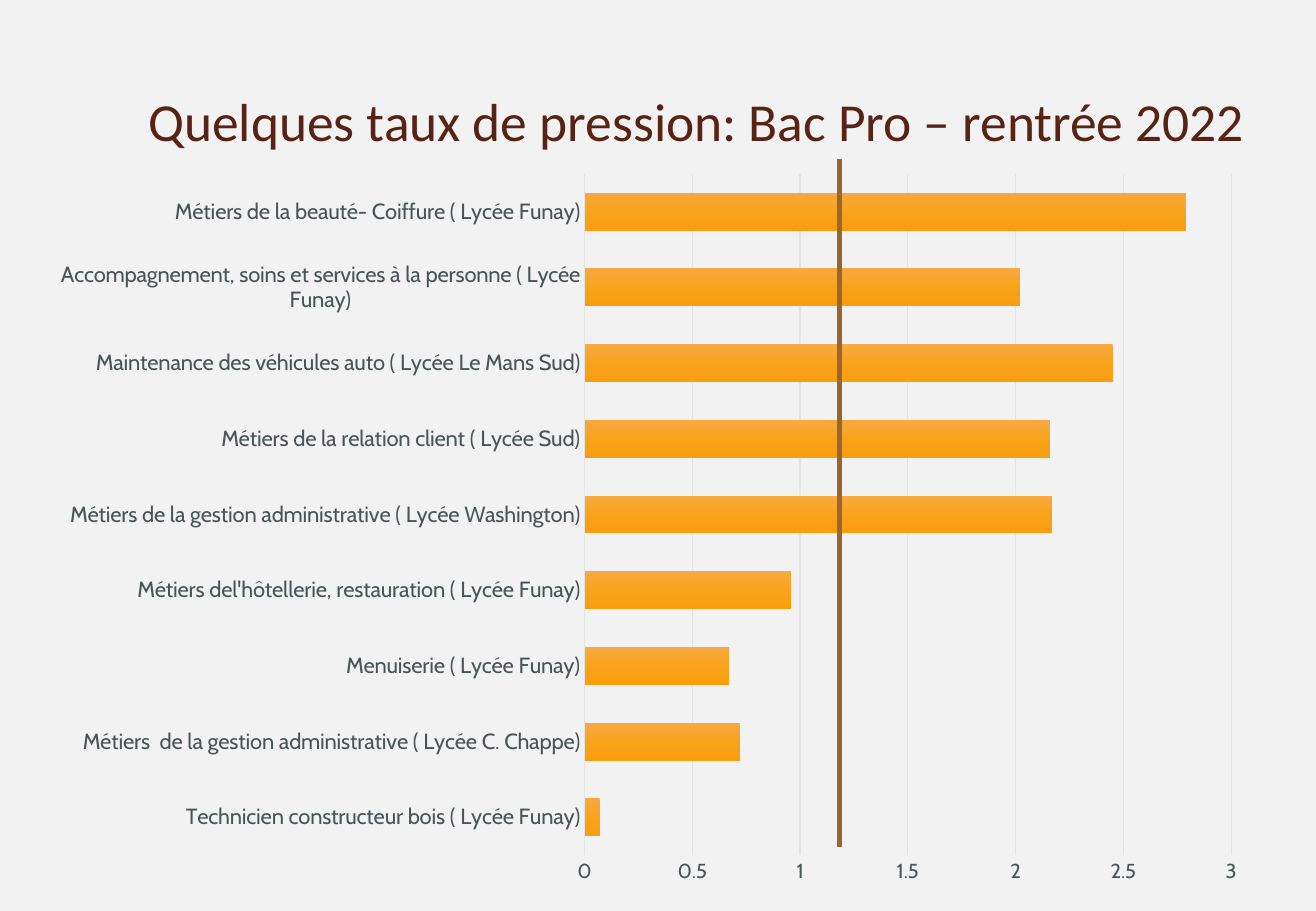
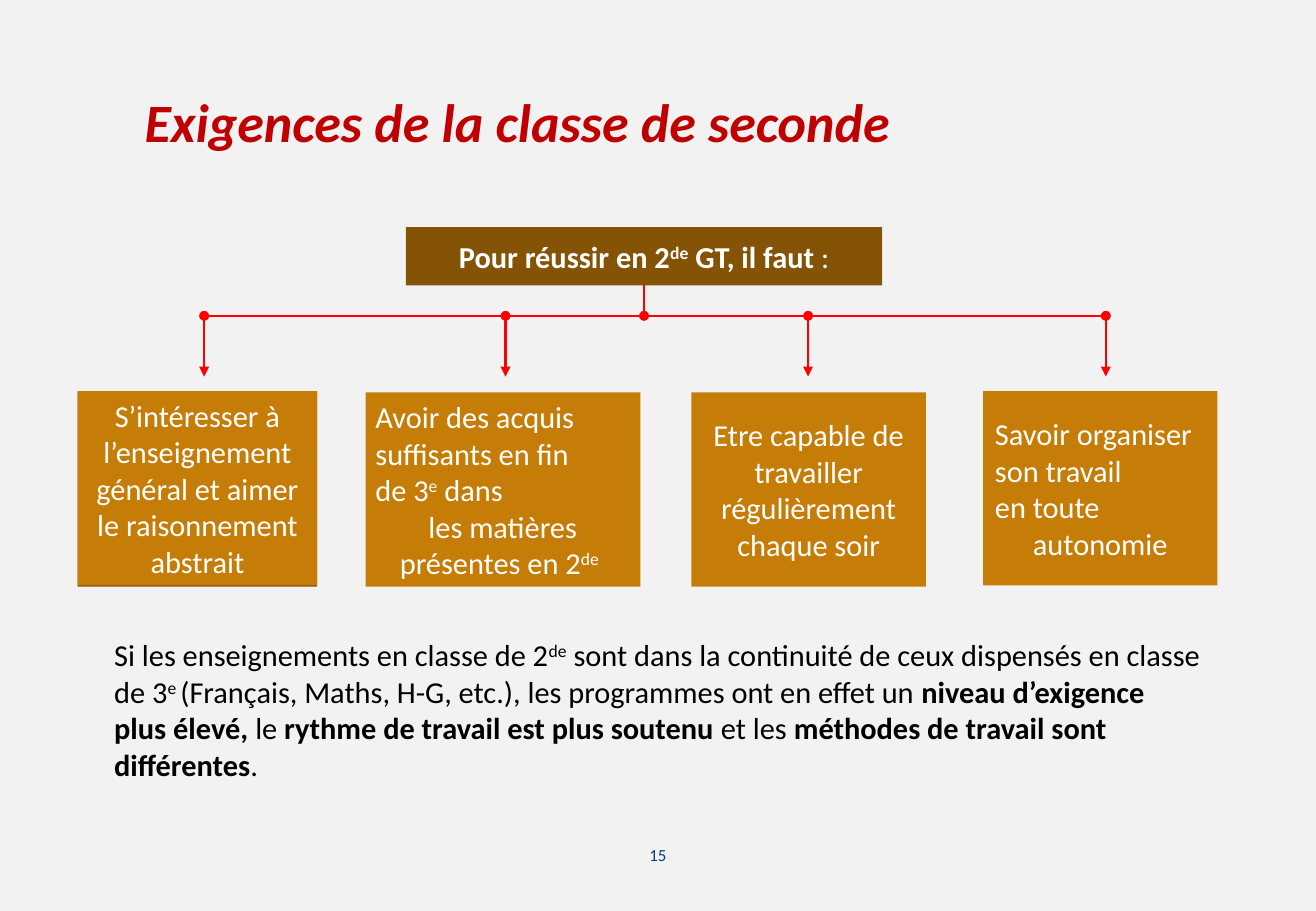
import copy

import lxml.etree
import pptx
import pptx.chart.data
import pptx.dml.color
import pptx.enum.chart
import pptx.enum.shapes
import pptx.enum.text
import pptx.oxml
import pptx.oxml.ns
import pptx.util

PX = 9144  # 100 px to the inch
WIDTH, HEIGHT = 1083, 750

BACKGROUND, WHITE, BLACK = "F2F2F2", "FFFFFF", "000000"
BROWN, DARK_RED, RED, LINE_BROWN = "572314", "C00000", "FF0000", "996633"
ROOT_FILL, CARD_FILL = "845305", "C67D08"
NUMBER_BLUE, AXIS_TEXT, GRID = "073E87", "4A5356", "E3E6E7"
BAR_STOPS = [(0, "F7A942"), (0.5, "F9A31A"), (1, "F99E0F")]
TEXT_FONT, CHART_FONT = "Calibri", "Cabin"

LEFT = pptx.enum.text.PP_ALIGN.LEFT
CENTER = pptx.enum.text.PP_ALIGN.CENTER
TOP = pptx.enum.text.MSO_ANCHOR.TOP
MIDDLE = pptx.enum.text.MSO_ANCHOR.MIDDLE
TITLE_ONLY, TITLE_AND_BODY = 5, 1


def px(length):
    return pptx.util.Emu(length * PX)


def color(value):
    return pptx.dml.color.RGBColor.from_string(value)


class Deck:
    """Holds the style and the current slide."""

    def __init__(self):
        self.presentation = pptx.Presentation()
        self.presentation.slide_width = px(WIDTH)
        self.presentation.slide_height = px(HEIGHT)
        background = self.presentation.slide_master.background.fill
        background.solid()
        background.fore_color.rgb = color(BACKGROUND)
        self.slide = None

    def new_slide(self, layout):
        layouts = self.presentation.slide_layouts
        self.slide = self.presentation.slides.add_slide(layouts[layout])

    def set_text(self, shape, paragraphs, size, text_color, anchor=MIDDLE,
                 insets=(10, 10), wrap=True):
        """Each paragraph is (alignment, runs); a run is (text, marks):
        b bold, i italic, ^ superscript."""
        frame = shape.text_frame
        frame.auto_size = pptx.enum.text.MSO_AUTO_SIZE.NONE
        frame.word_wrap = wrap
        frame.vertical_anchor = anchor
        frame.margin_left, frame.margin_right = map(px, insets)
        frame.margin_top = frame.margin_bottom = px(5)
        for index, (alignment, runs) in enumerate(paragraphs):
            paragraph = frame.add_paragraph() if index else frame.paragraphs[0]
            paragraph.alignment = alignment
            paragraph.space_before = pptx.util.Pt(0)
            for text, marks in runs:
                run = paragraph.add_run()
                run.text = text
                run.font.name = TEXT_FONT
                run.font.size = pptx.util.Pt(size)
                run.font.color.rgb = color(text_color)
                run.font.bold = "b" in marks
                run.font.italic = "i" in marks
                if "^" in marks:
                    run._r.get_or_add_rPr().set("baseline", "30000")

    def place(self, shape, box):
        shape.left, shape.top, shape.width, shape.height = map(px, box)

    def title(self, box, text, size, text_color, marks="", **style):
        shape = self.slide.shapes.title
        self.place(shape, box)
        self.set_text(shape, [(LEFT, [(text, marks)])], size, text_color,
                      **style)

    def body(self, box, paragraphs, size, text_color):
        shape = self.slide.placeholders[1]
        self.place(shape, box)
        self.set_text(shape, paragraphs, size, text_color, anchor=TOP)
        for paragraph in shape.text_frame.paragraphs:
            properties = paragraph._p.get_or_add_pPr()
            properties.set("marL", "0")
            properties.set("indent", "0")
            lxml.etree.SubElement(properties, pptx.oxml.ns.qn("a:buNone"))

    def text(self, box, paragraphs, size, text_color):
        shape = self.slide.shapes.add_textbox(*map(px, box))
        self.set_text(shape, paragraphs, size, text_color)

    def rectangle(self, box, fill, paragraphs=(), **style):
        kind = pptx.enum.shapes.MSO_SHAPE.RECTANGLE
        shape = self.slide.shapes.add_shape(kind, *map(px, box))
        shape.shadow.inherit = False
        shape.fill.solid()
        shape.fill.fore_color.rgb = color(fill)
        shape.line.fill.background()
        self.set_text(shape, paragraphs, 18, WHITE, **style)
        return shape

    def line(self, start, end, line_color, width, head=None, tail=None):
        kind = pptx.enum.shapes.MSO_CONNECTOR.STRAIGHT
        connector = self.slide.shapes.add_connector(kind, *map(px, start + end))
        connector.line.color.rgb = color(line_color)
        connector.line.width = pptx.util.Pt(width)
        outline = connector.line._get_or_add_ln()
        for tag, arrow in (("a:headEnd", head), ("a:tailEnd", tail)):
            if arrow:
                lxml.etree.SubElement(outline, pptx.oxml.ns.qn(tag), type=arrow)
        lxml.etree.SubElement(connector._element.spPr,
                              pptx.oxml.ns.qn("a:effectLst"))
        return connector

    def style_axis(self, axis, size):
        axis.major_tick_mark = pptx.enum.chart.XL_TICK_MARK.NONE
        axis.minor_tick_mark = pptx.enum.chart.XL_TICK_MARK.NONE
        font = axis.tick_labels.font
        font.name = CHART_FONT
        font.size = pptx.util.Pt(size)
        font.color.rgb = color(AXIS_TEXT)

    def bar_chart(self, box, series_name, rows, maximum, step):
        data = pptx.chart.data.CategoryChartData()
        data.categories = [label for label, value in rows]
        data.add_series(series_name, [value for label, value in rows])
        kind = pptx.enum.chart.XL_CHART_TYPE.BAR_CLUSTERED
        chart = self.slide.shapes.add_chart(kind, *map(px, box), data).chart
        chart.has_legend = chart.has_title = False
        chart.font.name = CHART_FONT
        chart.font.size = pptx.util.Pt(10)
        chart.font.color.rgb = color(BLACK)

        # Axes and grid
        self.style_axis(chart.category_axis, 13)
        self.style_axis(chart.value_axis, 12)
        axis = chart.value_axis
        axis.minimum_scale, axis.maximum_scale = 0, maximum
        axis.major_unit = step
        axis.format.line.fill.background()
        axis.has_major_gridlines = True
        for line in (chart.category_axis.format.line,
                     axis.major_gridlines.format.line):
            line.color.rgb = color(GRID)
            line.width = pptx.util.Pt(0.75)

        # Bars with a three-stop gradient
        plot = chart.plots[0]
        plot.gap_width = 100
        plot.vary_by_categories = False
        series = plot.series[0]
        series.invert_if_negative = False
        fill = series.format.fill
        fill.gradient()
        fill.gradient_angle = 270
        stops = series._element.xpath(".//a:gsLst")[0]
        stops.insert(1, copy.deepcopy(stops[0]))
        for stop, (position, value) in zip(fill.gradient_stops, BAR_STOPS):
            stop.position = position
            stop.color.rgb = color(value)


def pressure_slide(deck):
    deck.new_slide(TITLE_ONLY)
    deck.title((114, 48, 933, 102),
               "Quelques taux de pression: Bac Pro – rentrée 2022",
               31.7, BROWN, insets=(8, 8))
    deck.bar_chart((30, 131, 1008, 609), "Series 1", [
        ("Technicien constructeur bois ( Lycée Funay)", 0.07),
        ("Métiers  de la gestion administrative ( Lycée C. Chappe)", 0.72),
        ("Menuiserie ( Lycée Funay)", 0.67),
        ("Métiers del'hôtellerie, restauration ( Lycée Funay)", 0.96),
        ("Métiers de la gestion administrative ( Lycée Washington)", 2.17),
        ("Métiers de la relation client ( Lycée Sud)", 2.16),
        ("Maintenance des véhicules auto ( Lycée Le Mans Sud)", 2.45),
        ("Accompagnement, soins et services à la personne ( Lycée Funay)",
         2.02),
        ("Métiers de la beauté- Coiffure ( Lycée Funay)", 2.79),
    ], 3, 0.5)
    deck.line((691, 131), (691, 697), LINE_BROWN, 3)


def requirements_slide(deck):
    deck.new_slide(TITLE_AND_BODY)
    deck.title((109, 68, 866, 63), "Exigences de la classe de seconde",
               32, DARK_RED, "bi", anchor=TOP)

    # Root box, stem and horizontal bar
    root = deck.rectangle((334, 187, 392, 48), ROOT_FILL, [(CENTER, [
        ("Pour réussir en 2", "b"), ("de", "b^"), (" GT, il faut ", "b"),
        (":", "")])], wrap=False)
    bar_y = 260
    stem = deck.line((530, 235), (530, bar_y), RED, 1.25, tail="oval")
    stem.begin_connect(root, 2)
    deck.line((168, bar_y), (910, bar_y), RED, 1.25)

    # Cards: arrow x, left, top, width, insets, paragraphs
    cards = [
        (168, 64, 322, 197, (10, 10), [(CENTER, [
            ("S’intéresser à l’enseignement général et aimer le raisonnement "
             "abstrait", "")])]),
        (416, 301, 323, 226, (8, 14), [
            (LEFT, [("Avoir des acquis suffisants en fin", "")]),
            (LEFT, [("de 3", ""), ("e", "^"), (" dans", "")]),
            (CENTER, [(" les matières présentes en 2", ""), ("de", "^")])]),
        (665, 569, 323, 193, (16, 16), [(CENTER, [
            ("Etre capable de travailler régulièrement chaque soir", "")])]),
        (910, 809, 322, 193, (10, 10), [
            (LEFT, [("Savoir organiser", "")]),
            (LEFT, [("son travail", "")]),
            (LEFT, [("en toute", "")]),
            (CENTER, [("autonomie", "")])]),
    ]
    deck.rectangle((64, 323, 197, 160), ROOT_FILL)  # dark edge of first card
    for arrow_x, left, top, width, insets, paragraphs in cards:
        deck.line((arrow_x, bar_y), (arrow_x, 310), RED, 1.25,
                  head="oval", tail="triangle")
        deck.rectangle((left, top, width, 160), CARD_FILL, paragraphs,
                       insets=insets)

    # Conclusion and slide number
    deck.body((84, 519, 921, 130), [
        (LEFT, [("Si les enseignements en classe de 2", ""), ("de", "^"),
                (" sont dans la continuité de ceux dispensés en classe de 3",
                 ""), ("e ", "^"),
                ("(Français, Maths, H-G, etc.), les programmes ont en effet "
                 "un ", ""), ("niveau d’exigence", "b")]),
        (LEFT, [("plus élevé, ", "b"), ("le ", ""),
                ("rythme de travail est plus soutenu", "b"), (" et les ", ""),
                ("méthodes de travail sont", "b")]),
        (LEFT, [("différentes", "b"), (".", "")]),
    ], 18, BLACK)
    deck.text((478, 684, 127, 40), [(CENTER, [("15", "")])], 10, NUMBER_BLUE)


def main():
    deck = Deck()
    pressure_slide(deck)
    requirements_slide(deck)
    deck.presentation.save("out.pptx")


if __name__ == "__main__":
    main()
